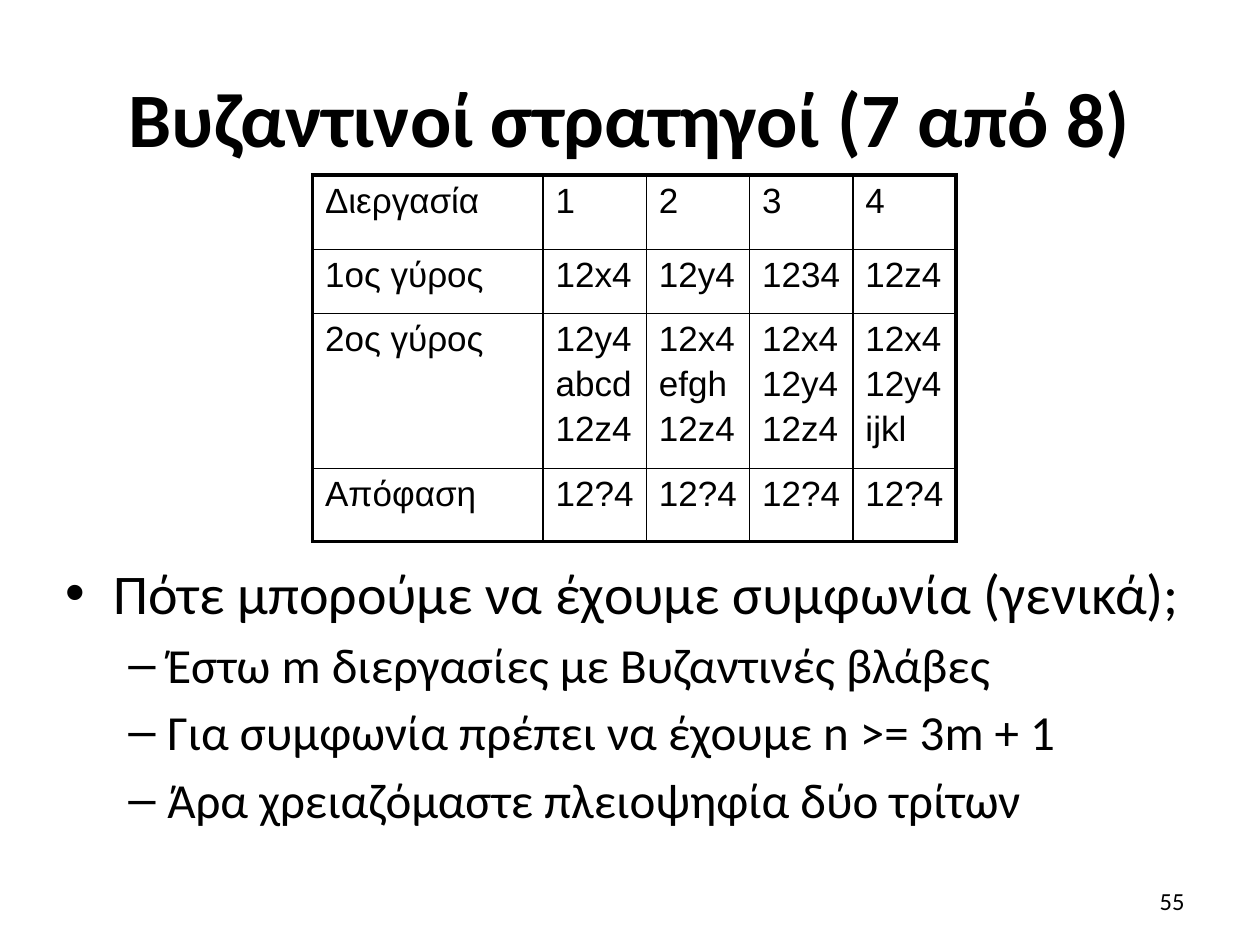
import pptx
import pptx.dml.color
import pptx.enum.text
import pptx.oxml.ns
import pptx.util
from lxml import etree

WIDE, HIGH = pptx.util.Inches(10), pptx.util.Inches(7.5)
COL, ROW = WIDE / 100, HIGH / 75
INK = "000000"
ALIGN = pptx.enum.text.PP_ALIGN
MIDDLE = pptx.enum.text.MSO_ANCHOR.MIDDLE

HEAD = {"name": "Calibri", "size": pptx.util.Pt(44), "bold": True}
CELL = {"name": "Arial", "size": pptx.util.Pt(20), "bold": False}
FOOT = {"name": "Calibri", "size": pptx.util.Pt(14)}
LEVELS = [
    {"font": {"name": "Calibri", "size": pptx.util.Pt(32)},
     "mark": "•", "left": 3.8, "hang": 3.8},
    {"font": {"name": "Calibri", "size": pptx.util.Pt(28)},
     "mark": "–", "left": 8.1, "hang": 3.1},
]

ROUNDS = [
    ["Διεργασία", "1", "2", "3", "4"],
    ["1ος γύρος", "12x4", "12y4", "1234", "12z4"],
    ["2ος γύρος", "12y4\nabcd\n12z4", "12x4\nefgh\n12z4",
     "12x4\n12y4\n12z4", "12x4\n12y4\nijkl"],
    ["Απόφαση"] + ["12?4"] * 4,
]
COLS = [18.3] + [8.2] * 4
ROWS = [5.9, 5.1, 12.3, 5.8]

POINTS = [
    (0, "Πότε μπορούμε να έχουμε συμφωνία (γενικά);"),
    (1, "Έστω m διεργασίες με Βυζαντινές βλάβες"),
    (1, "Για συμφωνία πρέπει να έχουμε n >= 3m + 1"),
    (1, "Άρα χρειαζόμαστε πλειοψηφία δύο τρίτων"),
]


def paint(code):
    return pptx.dml.color.RGBColor.from_string(code)


def place(left, top, width, height):
    """Turn grid columns and rows into slide lengths."""
    return [int(n * unit) for n, unit in
            zip((left, top, width, height), (COL, ROW, COL, ROW))]


def add(parent, tag, **attrs):
    return etree.SubElement(parent, pptx.oxml.ns.qn(tag), attrs)


def style(para, look):
    for key, value in look.items():
        setattr(para.font, key, value)
    para.font.color.rgb = paint(INK)


def fill(frame, lines, gap):
    """Write one paragraph per line, with a gap before all but the first."""
    for i, line in enumerate(lines):
        para = frame.paragraphs[0] if i == 0 else frame.add_paragraph()
        para.text = line
        if i:
            para.space_before = pptx.util.Pt(gap)
    return frame.paragraphs


def add_box(slide, area):
    frame = slide.shapes.add_textbox(*place(*area)).text_frame
    frame.word_wrap = True
    return frame


def add_line(slide, area, text, look, align):
    frame = add_box(slide, area)
    frame.vertical_anchor = MIDDLE
    para = fill(frame, [text], 0)[0]
    para.alignment = align
    style(para, look)


def add_list(slide, area, points):
    paras = fill(add_box(slide, area), [text for _, text in points], 5)
    for para, (depth, _) in zip(paras, points):
        level = LEVELS[depth]
        para.level = depth
        props = para._p.get_or_add_pPr()
        props.set("marL", str(int(level["left"] * COL)))
        props.set("indent", str(int(-level["hang"] * COL)))
        add(props, "a:buFont", typeface="Arial")
        add(props, "a:buChar", char=level["mark"])
        style(para, level["font"])


def edge(cell, outer):
    """Draw the four borders, thick on the sides named in outer."""
    props = cell._tc.get_or_add_tcPr()
    for side in "LRTB":
        width = pptx.util.Pt(2.25 if side in outer else 1)
        line = add(props, "a:ln" + side, w=str(width))
        add(add(line, "a:solidFill"), "a:srgbClr", val=INK)


def add_grid(slide, left, top, data):
    area = place(left, top, sum(COLS), sum(ROWS))
    table = slide.shapes.add_table(len(ROWS), len(COLS), *area).table
    table.first_row = table.horz_banding = False
    for col, width in zip(table.columns, COLS):
        col.width = int(width * COL)
    for row, height in zip(table.rows, ROWS):
        row.height = int(height * ROW)
    for r, texts in enumerate(data):
        for c, text in enumerate(texts):
            cell = table.cell(r, c)
            for para in fill(cell.text_frame, text.split("\n"), 3.4):
                style(para, CELL)
            sides = {"L": c == 0, "R": c == len(COLS) - 1,
                     "T": r == 0, "B": r == len(ROWS) - 1}
            edge(cell, [side for side, on in sides.items() if on])
            cell.fill.background()


def main():
    deck = pptx.Presentation()
    deck.slide_width, deck.slide_height = WIDE, HIGH
    slide = deck.slides.add_slide(deck.slide_layouts[6])
    add_line(slide, (5, 3, 90, 12.5), "Βυζαντινοί στρατηγοί (7 από 8)",
             HEAD, ALIGN.CENTER)
    add_grid(slide, 24.8, 13.9, ROUNDS)
    add_list(slide, (4.2, 43.8, 91.7, 26.2), POINTS)
    add_line(slide, (71.7, 69.5, 23.3, 4), "55", FOOT, ALIGN.RIGHT)
    deck.save("out.pptx")


if __name__ == "__main__":
    main()
